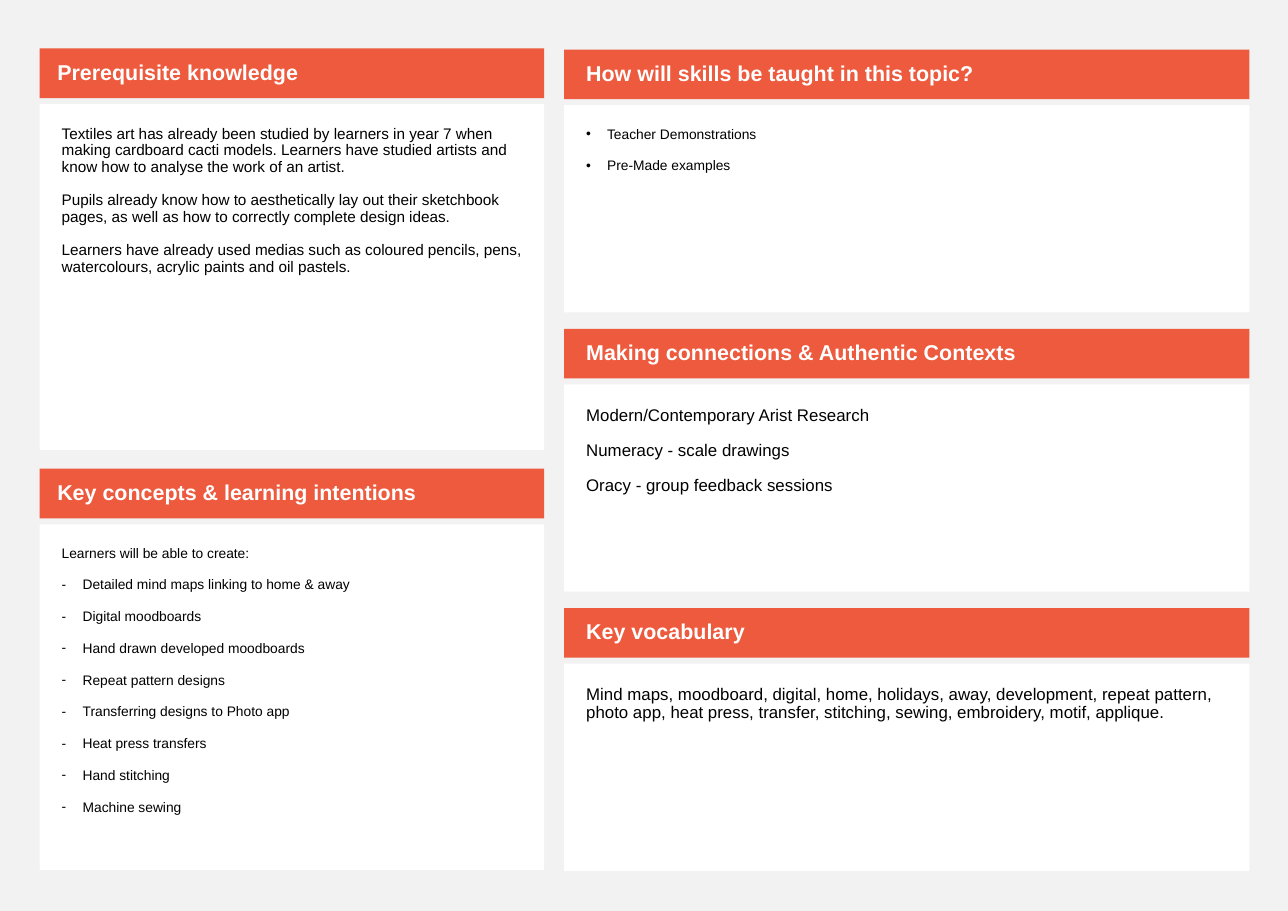
"""Builds a topic overview slide of five headed panels in two columns."""
from dataclasses import dataclass

from lxml.etree import SubElement
from pptx import Presentation
from pptx.dml.color import RGBColor
from pptx.enum.shapes import MSO_SHAPE as Preset
from pptx.enum.text import MSO_ANCHOR as Anchor, PP_ALIGN as Align
from pptx.oxml.ns import qn
from pptx.shapes.autoshape import Shape
from pptx.shapes.shapetree import SlideShapes
from pptx.text.text import TextFrame
from pptx.util import Emu, Pt

EMU_PER_PX = 4572
HEADING_HEIGHT = 90
BODY_OFFSET = 101
BODY_INSET = 40
HEADING_INSET_Y = 10
HEADING_INSET_RIGHT = 20
BULLET_INDENT = 38


@dataclass(frozen=True)
class Theme:
    font: str = "Arial"
    page: RGBColor = RGBColor(0xF2, 0xF2, 0xF2)
    accent: RGBColor = RGBColor(0xED, 0x5A, 0x3E)
    paper: RGBColor = RGBColor(0xFF, 0xFF, 0xFF)
    ink: RGBColor = RGBColor(0x00, 0x00, 0x00)
    heading: int = 14
    large: int = 11
    medium: int = 10
    small: int = 9
    space_before: int = 11
    line_spacing: float = 0.9


THEME = Theme()


@dataclass(frozen=True)
class Panel:
    heading: str
    size: int
    lines: tuple[str, ...]
    bullet: str = ""
    intro: str = ""


@dataclass(frozen=True)
class Column:
    left: int
    top: int
    width: int
    pitch: int
    body_height: int
    heading_inset: int
    panels: tuple[Panel, ...]


COLUMNS = (
    Column(72, 88, 916, 763, 628, 32, (
        Panel("Prerequisite knowledge", THEME.medium, (
            "Textiles art has already been studied by learners in year 7 when making cardboard "
            "cacti models. Learners have studied artists and know how to analyse the work of an artist.",
            "Pupils already know how to aesthetically lay out their sketchbook pages, "
            "as well as how to correctly complete design ideas.",
            "Learners have already used medias such as coloured "
            "pencils, pens, watercolours, acrylic paints and oil pastels.",
        )),
        Panel("Key concepts & learning intentions", THEME.small, (
            "Detailed mind maps linking to home & away",
            "Digital moodboards",
            "Hand drawn developed moodboards",
            "Repeat pattern designs",
            "Transferring designs to Photo app",
            "Heat press transfers",
            "Hand stitching",
            "Machine sewing",
        ), bullet="-", intro="Learners will be able to create:"),
    )),
    Column(1024, 90, 1244, 507, 376, 40, (
        Panel("How will skills be taught in this topic?", THEME.small,
              ("Teacher Demonstrations", "Pre-Made examples"), bullet="•"),
        Panel("Making connections & Authentic Contexts", THEME.large, (
            "Modern/Contemporary Arist Research",
            "Numeracy - scale drawings",
            "Oracy - group feedback sessions",
        )),
        Panel("Key vocabulary", THEME.large, (
            "Mind maps, moodboard, digital, home, holidays, away, development, repeat pattern, "
            "photo app, heat press, transfer, stitching, sewing, embroidery, motif, applique.",
        )),
    )),
)


def px(length: int) -> Emu:
    """Turn px into EMU."""
    return Emu(length * EMU_PER_PX)


def add_box(shapes: SlideShapes, left: int, top: int, width: int, height: int,
            fill: RGBColor, insets: tuple[int, int, int, int], anchor: Anchor) -> Shape:
    """Draw a plain filled rectangle that is ready for text."""
    box = shapes.add_shape(Preset.RECTANGLE, px(left), px(top), px(width), px(height))
    box.shadow.inherit = False
    box.fill.solid()
    box.fill.fore_color.rgb = fill
    box.line.fill.background()
    frame = box.text_frame
    frame.word_wrap = True
    frame.vertical_anchor = anchor
    (frame.margin_left, frame.margin_top,
     frame.margin_right, frame.margin_bottom) = map(px, insets)
    return box


def write_lines(frame: TextFrame, lines: list[tuple[str, str]], size: int,
                color: RGBColor, bold: bool = False) -> None:
    """Write pairs of bullet and wording as paragraphs."""
    for index, (bullet, wording) in enumerate(lines):
        paragraph = frame.add_paragraph() if index else frame.paragraphs[0]
        paragraph.alignment = Align.LEFT
        paragraph.line_spacing = THEME.line_spacing
        paragraph.space_before = Pt(THEME.space_before)
        if bullet:
            properties = paragraph._p.get_or_add_pPr()
            properties.set("marL", str(px(BULLET_INDENT)))
            properties.set("indent", str(px(-BULLET_INDENT)))
            SubElement(properties, qn("a:buFont"), typeface=THEME.font)
            SubElement(properties, qn("a:buChar"), char=bullet)
        run = paragraph.add_run()
        run.text = wording
        run.font.name = THEME.font
        run.font.size = Pt(size)
        run.font.bold = bold
        run.font.color.rgb = color


def add_panel(shapes: SlideShapes, column: Column, panel: Panel, top: int) -> None:
    """Draw a body with its heading band above it."""
    body = add_box(shapes, column.left, top + BODY_OFFSET, column.width, column.body_height,
                   THEME.paper, (BODY_INSET,) * 4, Anchor.TOP)
    intro = [("", panel.intro)] if panel.intro else []
    lines = intro + [(panel.bullet, line) for line in panel.lines]
    write_lines(body.text_frame, lines, panel.size, THEME.ink)
    insets = (column.heading_inset, HEADING_INSET_Y, HEADING_INSET_RIGHT, HEADING_INSET_Y)
    band = add_box(shapes, column.left, top, column.width, HEADING_HEIGHT,
                   THEME.accent, insets, Anchor.MIDDLE)
    write_lines(band.text_frame, [("", panel.heading)], THEME.heading, THEME.paper, bold=True)


def main() -> None:
    """Build and save the slide."""
    deck = Presentation()
    deck.slide_width, deck.slide_height = px(2338), px(1654)
    slide = deck.slides.add_slide(deck.slide_layouts[6])
    slide.background.fill.solid()
    slide.background.fill.fore_color.rgb = THEME.page
    for column in COLUMNS:
        for row, panel in enumerate(column.panels):
            add_panel(slide.shapes, column, panel, column.top + row * column.pitch)
    deck.save("out.pptx")


if __name__ == "__main__":
    main()
